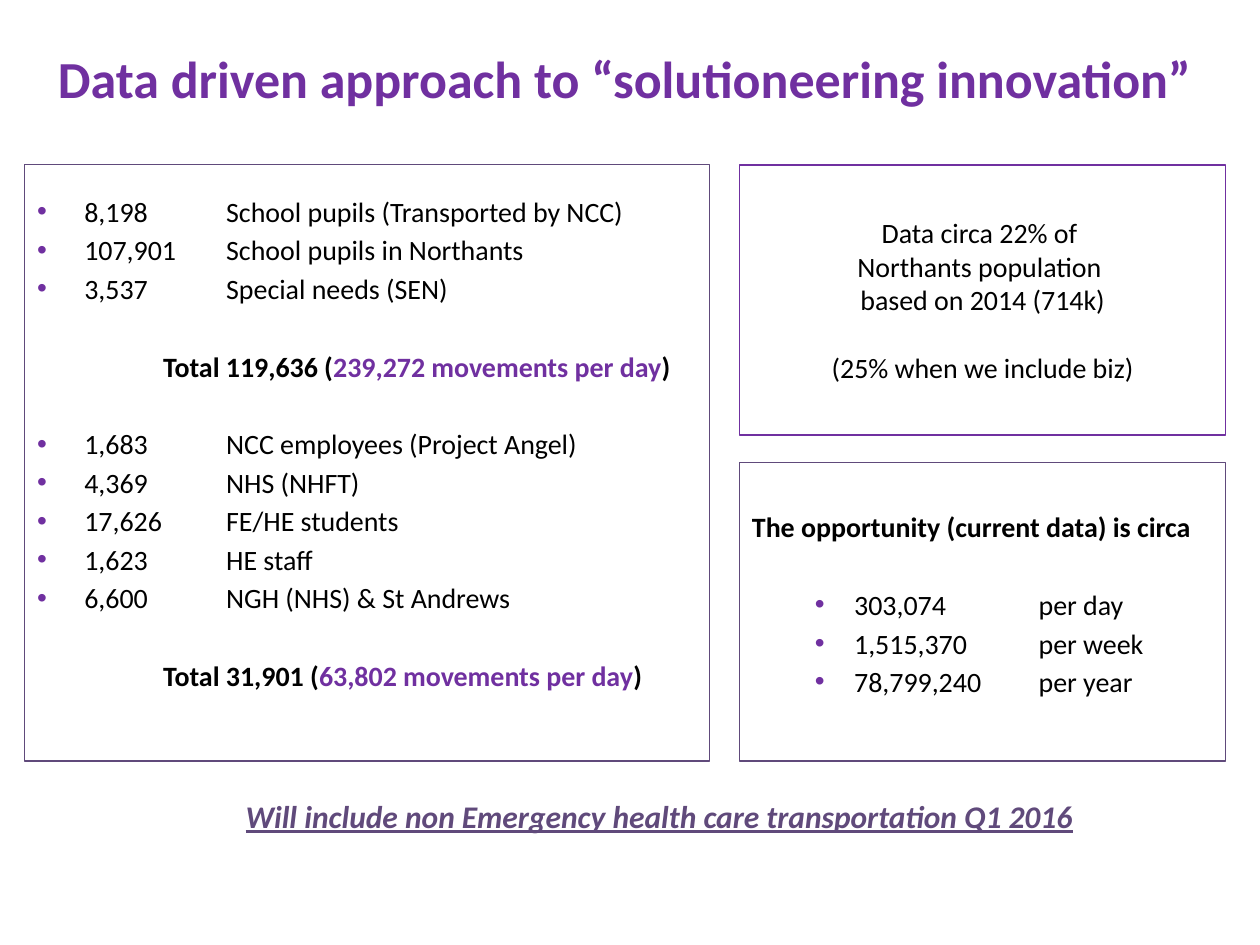
from lxml.etree import SubElement as Sub
from pptx import Presentation
from pptx.dml.color import RGBColor as Rgb
from pptx.enum.shapes import MSO_SHAPE as Kind
from pptx.enum.text import MSO_ANCHOR as Anchor, MSO_AUTO_SIZE as Fit, PP_ALIGN as Align
from pptx.oxml.ns import qn
from pptx.util import Cm, Pt

HUES = {"main": "7030A0", "deep": "604A7B", "ink": "000000", "paper": "FFFFFF"}
STEP = 2.8   # space before a list line, in points
GAP = 25.2   # space before a new group


def hue(name):
    return Rgb.from_string(HUES[name])


def add_run(para, text, size=16, color="ink", bold=False):
    run = para.add_run()
    run.text = text
    font = run.font
    font.name, font.size, font.bold = "Calibri", Pt(size), bold
    font.color.rgb = hue(color)
    return run


def add_para(frame, align=Align.LEFT, before=0, left=0, hang=0, dot=False, tab=None):
    """Start a paragraph, using the frame's empty first one if there is one."""
    first = frame.paragraphs[0]
    fresh = not first.runs
    para = first if fresh else frame.add_paragraph()
    para.alignment = align
    para.space_before = Pt(0 if fresh else before)
    props = para._p.get_or_add_pPr()
    props.set("marL", str(Cm(left)))
    props.set("indent", str(Cm(-hang)))
    if dot:
        Sub(Sub(props, qn("a:buClr")), qn("a:srgbClr"), val=HUES["main"])
        Sub(props, qn("a:buFont"), typeface="Arial")
        Sub(props, qn("a:buChar"), char="•")
    else:
        Sub(props, qn("a:buNone"))
    if tab:
        Sub(Sub(props, qn("a:tabLst")), qn("a:tab"), pos=str(Cm(tab)), algn="l")
    return para


def place(shape, box, top=0.13, anchor=Anchor.TOP, wrap=True):
    shape.left, shape.top, shape.width, shape.height = map(Cm, box)
    frame = shape.text_frame
    frame.auto_size, frame.word_wrap = Fit.NONE, wrap
    frame.vertical_anchor = anchor
    frame.margin_left = frame.margin_right = Cm(0.25)
    frame.margin_top, frame.margin_bottom = Cm(top), Cm(0.13)
    return frame


def edge(shape, color):
    shape.line.color.rgb = hue(color)
    shape.line.width = Pt(0.75)


def add_panel(slide, box, color, top):
    shape = slide.shapes.add_shape(Kind.RECTANGLE, *map(Cm, box))
    shape.shadow.inherit = False
    shape.fill.solid()
    shape.fill.fore_color.rgb = hue("paper")
    edge(shape, color)
    return place(shape, box, top)


def add_title(slide, box):
    frame = place(slide.shapes.title, box, anchor=Anchor.MIDDLE)
    para = add_para(frame, Align.CENTER)
    add_run(para, "Data driven approach to “solutioneering innovation”", 29.7, "main", True)


def add_counts(slide, box):
    groups = [
        (["8,198 \t\tSchool pupils (Transported by NCC)",
          "107,901 \tSchool pupils in Northants",
          "3,537 \t\tSpecial needs (SEN)"],
         "119,636", "239,272"),
        (["1,683 \t\tNCC employees (Project Angel)",
          "4,369 \t\tNHS (NHFT)",
          "17,626 \tFE/HE students",
          "1,623 \t\tHE staff",
          "6,600\t\tNGH (NHS) & St Andrews"],
         "31,901", "63,802"),
    ]
    body = slide.placeholders[1]
    edge(body, "deep")
    frame = place(body, box, top=0.6)
    for rows, total, moves in groups:
        for num, row in enumerate(rows):
            add_run(add_para(frame, before=STEP if num else GAP, left=0.95, hang=0.95, dot=True), row)
        para = add_para(frame, before=GAP, left=2.54)
        add_run(para, f"Total {total} (", bold=True)
        add_run(para, f"{moves} movements per day", color="main", bold=True)
        add_run(para, ")", bold=True)


def add_share(slide, box):
    frame = add_panel(slide, box, "main", 1.02)
    for text in ("Data circa 22% of ", "Northants population ", "based on 2014 (714k)"):
        add_run(add_para(frame, Align.CENTER), text)
    add_run(add_para(frame, Align.CENTER, before=19.5), "(25% when we include biz)")


def add_chance(slide, box):
    frame = add_panel(slide, box, "deep", 0.96)
    add_run(add_para(frame), "The opportunity (current data) is circa", bold=True)
    rows = [("303,074", "day"), ("1,515,370", "week"), ("78,799,240", "year")]
    for num, (count, span) in enumerate(rows):
        para = add_para(frame, before=STEP if num else GAP, left=2.06, hang=0.79, dot=True, tab=5.78)
        add_run(para, f"{count}\tper {span}")


def add_note(slide, box):
    frame = place(slide.shapes.add_textbox(0, 0, 0, 0), box, wrap=False)
    text = "Will include non Emergency health care transportation Q1 2016"
    run = add_run(add_para(frame), text, 18, "deep", True)
    run.font.italic = run.font.underline = True


def main():
    deck = Presentation()
    deck.slide_width, deck.slide_height = Cm(25.4), Cm(19.05)
    slide = deck.slides.add_slide(deck.slide_layouts[1])
    add_title(slide, (0.3, 0.76, 24.61, 1.63))
    add_counts(slide, (0.5, 3.32, 13.8, 12.02))
    add_share(slide, (14.91, 3.33, 9.8, 5.44))
    add_chance(slide, (14.91, 9.32, 9.8, 6.02))
    add_note(slide, (4.7, 15.93, 17.35, 1.02))
    deck.save("out.pptx")


if __name__ == "__main__":
    main()
